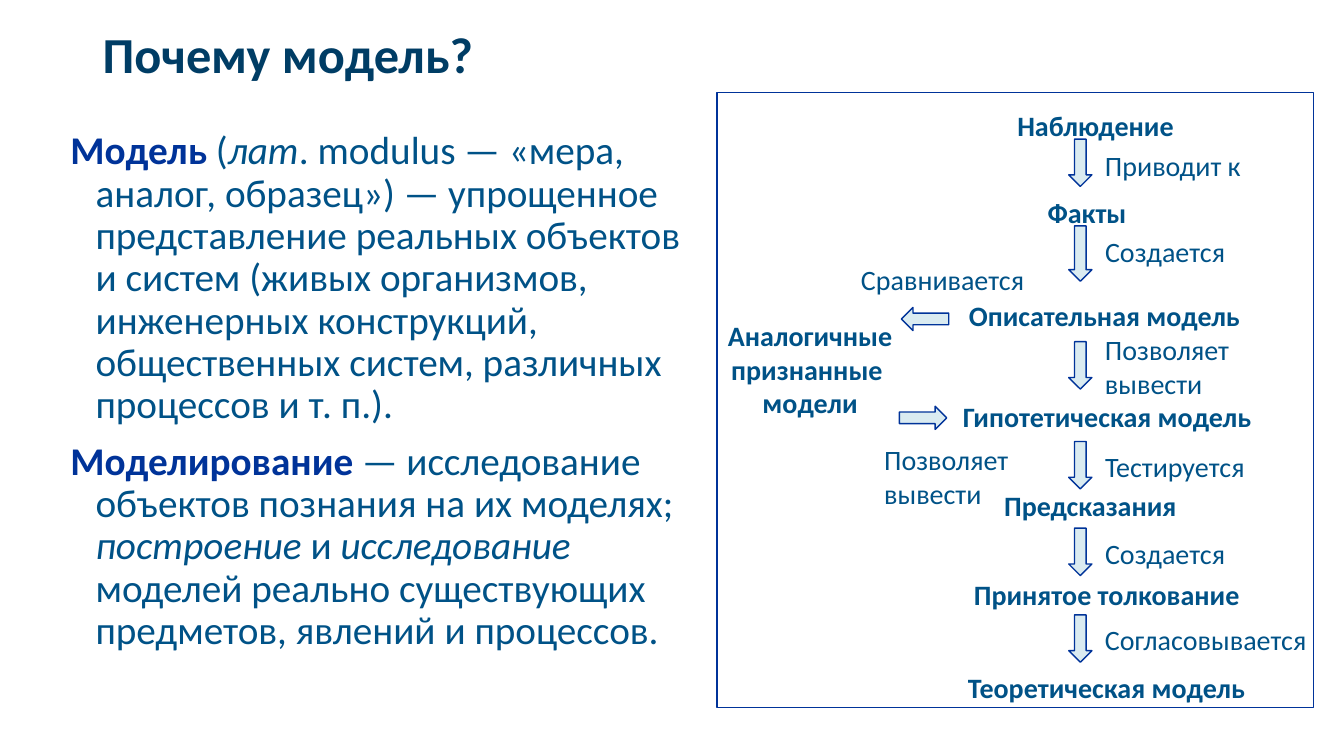
from pptx import Presentation
from pptx.dml.color import RGBColor
from pptx.enum.shapes import MSO_SHAPE as Shape
from pptx.enum.text import MSO_ANCHOR as Anchor, MSO_AUTO_SIZE as AutoSize, PP_ALIGN as Align
from pptx.util import Inches, Pt

CELL = Inches(0.1)  # columns and rows of the page grid
COLORS = {"title": "003D65", "text": "005287", "accent": "003399",
          "arrow": "DAEBF1", "paper": "FFFFFF"}
LINE_ROWS = 3.35  # height of one line in a label
ARROW_WIDTH = 2.3
ARROW_COLUMN = 106
NOTE_COLUMN = 109.5

# Chain of steps: text, column, row, width
STEPS = [
    ("Наблюдение", 100.8, 10.7, 15.8),
    ("Факты", 103.8, 19.3, 8.1),
    ("Описательная модель", 96, 29.5, 27.2),
    ("Гипотетическая модель", 95.4, 39.5, 28.9),
    ("Предсказания", 99.5, 48.4, 17.4),
    ("Принятое толкование", 96.5, 57.2, 26.7),
    ("Теоретическая модель", 95.9, 66.4, 27.9),
]
# Links between steps: arrow row, arrow length, note lines, note row, note width
LINKS = [
    (13.8, 4.7, ["Приводит к"], 14.6, 13.7),
    (22.4, 5.5, ["Создается"], 23.2, 12.2),
    (33.9, 4.7, ["Позволяет", "вывести"], 32.9, 13.3),
    (43.8, 4.7, ["Тестируется"], 44.5, 14.2),
    (52.4, 4.7, ["Создается"], 53.1, 12.2),
    (61, 4.7, ["Согласовывается"], 61.7, 20.4),
]
# Definitions: text, style
DEFINITIONS = [
    [("Модель", "term"), (" (", ""), ("лат", "italic"),
     (". modulus — «мера, аналог, образец») — упрощенное представление "
      "реальных объектов и систем (живых организмов, инженерных конструкций, "
      "общественных систем, различных процессов и т. п.).", "")],
    [("Моделирование", "term"),
     (" — исследование объектов познания на их моделях; ", ""),
     ("построение", "italic"), (" и ", ""), ("исследование", "italic"),
     (" моделей реально существующих предметов, явлений и процессов.", "")],
]


def color(name):
    return RGBColor.from_string(COLORS[name])


def grid(*cells):
    return [round(cell * CELL) for cell in cells]


def add_span(para, text, size, tint="text", bold=False, italic=False):
    span = para.add_run()
    span.text = text
    font = span.font
    font.name, font.size, font.bold, font.italic = "Calibri", Pt(size), bold, italic
    font.color.rgb = color(tint)


def add_panel(page, kind, place, fill=None, line=None):
    panel = page.shapes.add_shape(kind, *grid(*place))
    panel.shadow.inherit = False
    if fill:
        panel.fill.solid()
        panel.fill.fore_color.rgb = color(fill)
    else:
        panel.fill.background()
    if line:
        panel.line.color.rgb = color(line)
        panel.line.width = Pt(1)
    else:
        panel.line.fill.background()
    return panel


def add_label(page, lines, column, row, width, bold=False, align=Align.LEFT, fill="paper"):
    place = (column, row, width, LINE_ROWS * len(lines) + 0.2)
    if fill:
        box = add_panel(page, Shape.RECTANGLE, place, fill)
    else:
        box = page.shapes.add_textbox(*grid(*place))
    frame = box.text_frame
    frame.word_wrap = False
    frame.auto_size = AutoSize.SHAPE_TO_FIT_TEXT
    frame.vertical_anchor = Anchor.TOP
    frame.margin_left = frame.margin_right = Inches(0.01)
    frame.margin_top = frame.margin_bottom = Inches(0.01)
    for index, text in enumerate(lines):
        para = frame.add_paragraph() if index else frame.paragraphs[0]
        para.alignment = align
        add_span(para, text, 20, bold=bold)


def add_arrow(page, column, row, length, rotation=0):
    arrow = add_panel(page, Shape.DOWN_ARROW, (column, row, ARROW_WIDTH, length),
                      "arrow", "accent")
    arrow.rotation = rotation


def add_title(page, text):
    box = page.shapes.add_textbox(*grid(9.2, 0, 115, 11.3))
    box.text_frame.word_wrap = True
    box.text_frame.vertical_anchor = Anchor.MIDDLE
    para = box.text_frame.paragraphs[0]
    para.line_spacing = 0.9
    add_span(para, text, 36, "title", bold=True)


def add_definitions(page):
    box = page.shapes.add_textbox(*grid(6, 12.5, 65.3, 57.4))
    frame = box.text_frame
    frame.word_wrap = True
    for index, parts in enumerate(DEFINITIONS):
        para = frame.add_paragraph() if index else frame.paragraphs[0]
        para.line_spacing = 0.9
        para.space_before = Pt(10)
        # Hanging indent
        props = para._p.get_or_add_pPr()
        props.set("marL", str(Inches(0.25)))
        props.set("indent", str(-Inches(0.25)))
        for text, style in parts:
            term = style == "term"
            add_span(para, text, 28, "accent" if term else "text",
                     bold=term, italic=style == "italic")


def add_scheme(page):
    add_panel(page, Shape.RECTANGLE, (71.1, 9.2, 59.2, 61), line="accent")

    # Main chain
    for text, column, row, width in STEPS:
        add_label(page, [text], column, row, width, bold=True)
    for row, length, note, note_row, note_width in LINKS:
        add_arrow(page, ARROW_COLUMN, row, length)
        add_label(page, note, NOTE_COLUMN, note_row, note_width)

    # Side branch with similar models
    add_label(page, ["Аналогичные", "признанные ", "модели"], 72, 31.5, 16.7,
              bold=True, align=Align.CENTER)
    add_arrow(page, 90.6, 29.3, 4.7, rotation=90)
    add_arrow(page, 90.4, 39.1, 4.7, rotation=270)
    add_label(page, ["Сравнивается"], 85.3, 25.9, 16.6)
    add_label(page, ["Позволяет", "вывести"], 87.6, 43.8, 13.3, fill=None)


def main():
    deck = Presentation()
    deck.slide_width, deck.slide_height = Inches(13.33), Inches(7.5)
    page = deck.slides.add_slide(deck.slide_layouts[6])
    add_title(page, "Почему модель?")
    add_definitions(page)
    add_scheme(page)
    deck.save("out.pptx")


if __name__ == "__main__":
    main()
